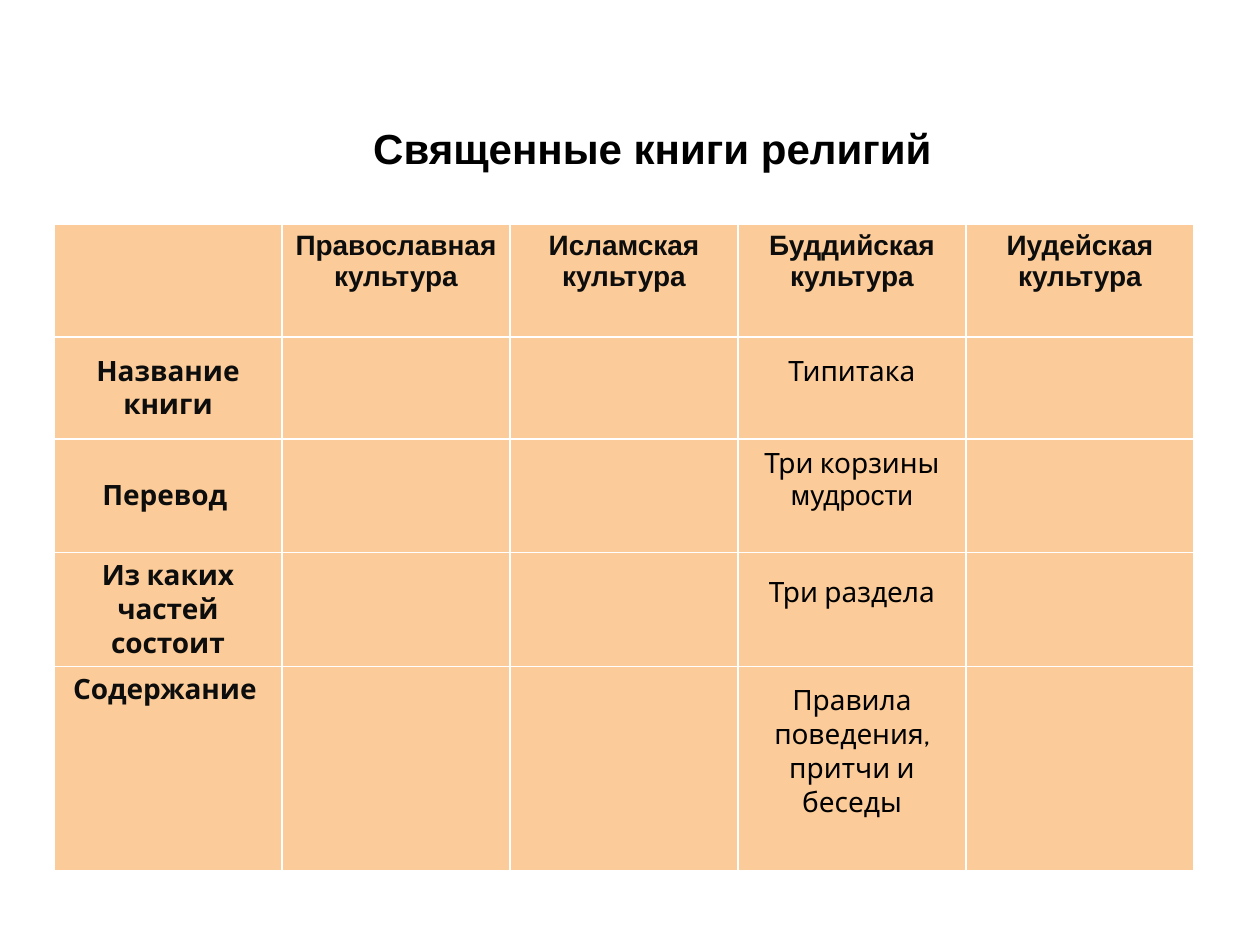
from pptx import Presentation
from pptx.dml.color import RGBColor
from pptx.enum.text import MSO_ANCHOR, PP_ALIGN
from pptx.util import Pt

# Content
TITLE = "Священные книги религий"
CULTURES = ["Православная культура", "Исламская культура",
            "Буддийская культура", "Иудейская культура"]
TOPICS = ["Название книги", "Перевод ", "Из каких частей состоит", "Содержание "]
BUDDHIST_COL = 3
BUDDHIST = [[("Типитака", "Cabin")],
            [("Три корзины", "Cabin"), (" мудрости", "Arial")],
            [("Три раздела", "Cabin")],
            [("Правила поведения, притчи и беседы", "Cabin")]]

# Layout in px
ROW_HEIGHTS = [113, 102, 113, 114, 204]
COL_WIDTH = 228
LEFT, TOP = 54, 224
LINE_HEIGHT = 34
BLACK, DARK, PEACH = "000000", "0D0D0D", "FBCC9A"


def px(n):
    return round(n * 914400 / 126)


def color(value):
    return RGBColor.from_string(value)


def write(tf, runs, size, shade, bold):
    p = tf.paragraphs[0]
    p.alignment = PP_ALIGN.CENTER
    for text, font in runs:
        r = p.add_run()
        r.text = text
        r.font.name = font
        r.font.size = Pt(size)
        r.font.bold = bold
        r.font.color.rgb = color(shade)


prs = Presentation()
prs.slide_width, prs.slide_height = px(1260), px(945)
s = prs.slides.add_slide(prs.slide_layouts[6])

# Title
title = s.shapes.add_textbox(px(84), px(116), px(1137), px(577))
title.text_frame.word_wrap = True
write(title.text_frame, [(TITLE, "Arial")], 24, BLACK, True)

# Table frame
cols = len(CULTURES) + 1
table = s.shapes.add_table(len(ROW_HEIGHTS), cols, px(LEFT), px(TOP),
                           px(COL_WIDTH * cols), px(sum(ROW_HEIGHTS))).table
table.horz_banding = False
for col in table.columns:
    col.width = px(COL_WIDTH)
for row, height in zip(table.rows, ROW_HEIGHTS):
    row.height = px(height)
for cell in table.iter_cells():
    cell.fill.solid()
    cell.fill.fore_color.rgb = color(PEACH)

# Header row
for i, culture in enumerate(CULTURES, 1):
    write(table.cell(0, i).text_frame, [(culture, "Arial")], 16, DARK, True)

# Topics and Buddhist answers; answers sit half a line above the middle
for i, (topic, answer) in enumerate(zip(TOPICS, BUDDHIST), 1):
    cell = table.cell(i, 0)
    write(cell.text_frame, [(topic, "Cabin")], 16, DARK, True)
    if i < len(TOPICS):
        cell.vertical_anchor = MSO_ANCHOR.MIDDLE
    cell = table.cell(i, BUDDHIST_COL)
    write(cell.text_frame, answer, 16, BLACK, False)
    cell.vertical_anchor = MSO_ANCHOR.MIDDLE
    cell.margin_bottom = px(6 + LINE_HEIGHT)

prs.save("out.pptx")
